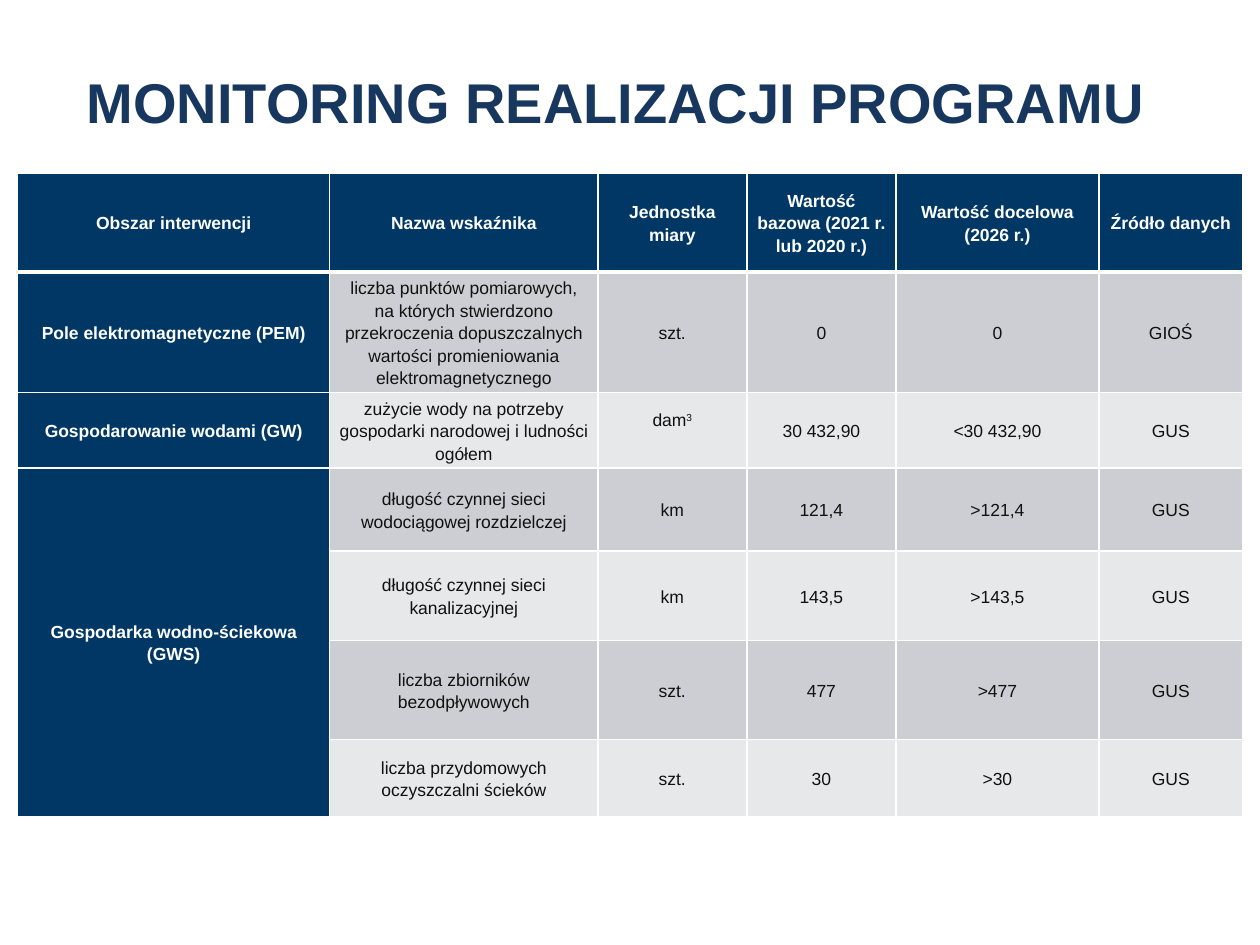
from lxml.etree import SubElement
from pptx import Presentation
from pptx.dml.color import RGBColor
from pptx.enum.text import MSO_ANCHOR, PP_ALIGN
from pptx.oxml.ns import qn
from pptx.util import Pt

NAVY = RGBColor(0x00, 0x37, 0x64)
TITLE_BLUE = RGBColor(0x17, 0x37, 0x5E)
INK = RGBColor(0x11, 0x11, 0x11)
WHITE = RGBColor(0xFF, 0xFF, 0xFF)
BANDS = (RGBColor(0xCC, 0xCE, 0xD3), RGBColor(0xE7, 0xE8, 0xEA))

FONT = "Arial"
COL_WIDTHS = (178.4, 153.2, 85.2, 85.2, 116, 82.2)
ROW_HEIGHTS = (56.6, 43, 43, 47.5, 51, 56.6, 44)
ROWS = (
    ("Obszar interwencji", "Nazwa wskaźnika", "Jednostka miary",
     "Wartość bazowa (2021 r. lub 2020 r.)", "Wartość docelowa\n(2026 r.)", "Źródło danych"),
    ("Pole elektromagnetyczne (PEM)",
     "liczba punktów pomiarowych, na których stwierdzono przekroczenia "
     "dopuszczalnych wartości promieniowania elektromagnetycznego",
     "szt.", "0", "0", "GIOŚ"),
    ("Gospodarowanie wodami (GW)",
     "zużycie wody na potrzeby gospodarki narodowej i ludności ogółem",
     "dam", "30 432,90", "<30 432,90", "GUS"),
    ("Gospodarka wodno-ściekowa (GWS)", "długość czynnej sieci wodociągowej rozdzielczej",
     "km", "121,4", ">121,4", "GUS"),
    ("", "długość czynnej sieci kanalizacyjnej", "km", "143,5", ">143,5", "GUS"),
    ("", "liczba zbiorników bezodpływowych", "szt.", "477", ">477", "GUS"),
    ("", "liczba przydomowych oczyszczalni ścieków", "szt.", "30", ">30", "GUS"),
)


def set_font(p, size, color, bold):
    """Set the font of a whole paragraph."""
    f = p.font
    f.name, f.size, f.bold = FONT, Pt(size), bold
    f.color.rgb = color


def add_borders(cell, bottom):
    """Draw white cell borders with the given bottom width in points."""
    tc_pr = cell._tc.get_or_add_tcPr()
    for side, width in (("L", 1), ("R", 1), ("T", 1), ("B", bottom)):
        ln = SubElement(tc_pr, qn(f"a:ln{side}"), w=str(Pt(width)))
        fill = SubElement(ln, qn("a:solidFill"))
        SubElement(fill, qn("a:srgbClr"), val=str(WHITE))


def style_cell(cell, text, fill, color, bold, bottom):
    """Fill one table cell with centred text."""
    add_borders(cell, bottom)
    cell.fill.solid()
    cell.fill.fore_color.rgb = fill
    cell.vertical_anchor = MSO_ANCHOR.MIDDLE
    cell.margin_left = cell.margin_right = Pt(5)
    cell.margin_top = cell.margin_bottom = Pt(0)
    cell.text = text
    for p in cell.text_frame.paragraphs:
        p.alignment = PP_ALIGN.CENTER
        p.line_spacing = 1.15
        set_font(p, 10, color, bold)


def add_title(s, x, y, w, h):
    """Place the slide title in its box."""
    tf = s.shapes.add_textbox(Pt(x), Pt(y), Pt(w), Pt(h)).text_frame
    tf.word_wrap = True
    tf.margin_top = Pt(7)
    p = tf.paragraphs[0]
    p.text = "MONITORING REALIZACJI PROGRAMU"
    set_font(p, 32, TITLE_BLUE, True)


def add_indicators(s, x, y, w, h):
    """Place the indicator table in its box."""
    table = s.shapes.add_table(len(ROWS), len(COL_WIDTHS), Pt(x), Pt(y), Pt(w), Pt(h)).table
    for col, width in zip(table.columns, COL_WIDTHS):
        col.width = Pt(width * w / sum(COL_WIDTHS))
    for row, height in zip(table.rows, ROW_HEIGHTS):
        row.height = Pt(height)
    for i, row in enumerate(ROWS):
        for j, text in enumerate(row):
            heading = i == 0 or j == 0
            fill = NAVY if heading else BANDS[(i - 1) % 2]
            style_cell(table.cell(i, j), text, fill, WHITE if heading else INK,
                       heading, 3 if i == 0 else 1)
    table.cell(3, 0).merge(table.cell(6, 0))
    volume = table.cell(2, 2)
    volume.margin_bottom = Pt(12.6)
    r = volume.text_frame.paragraphs[0].add_run()
    r.text = "3"
    r.font._element.set("baseline", "30000")


def main():
    """Build and save the slide."""
    prs = Presentation()
    prs.slide_width, prs.slide_height = Pt(720), Pt(540)
    s = prs.slides.add_slide(prs.slide_layouts[6])
    add_title(s, 42.5, 31.7, 635, 67)
    add_indicators(s, 10, 98.8, 700.2, sum(ROW_HEIGHTS))
    prs.save("out.pptx")


if __name__ == "__main__":
    main()
